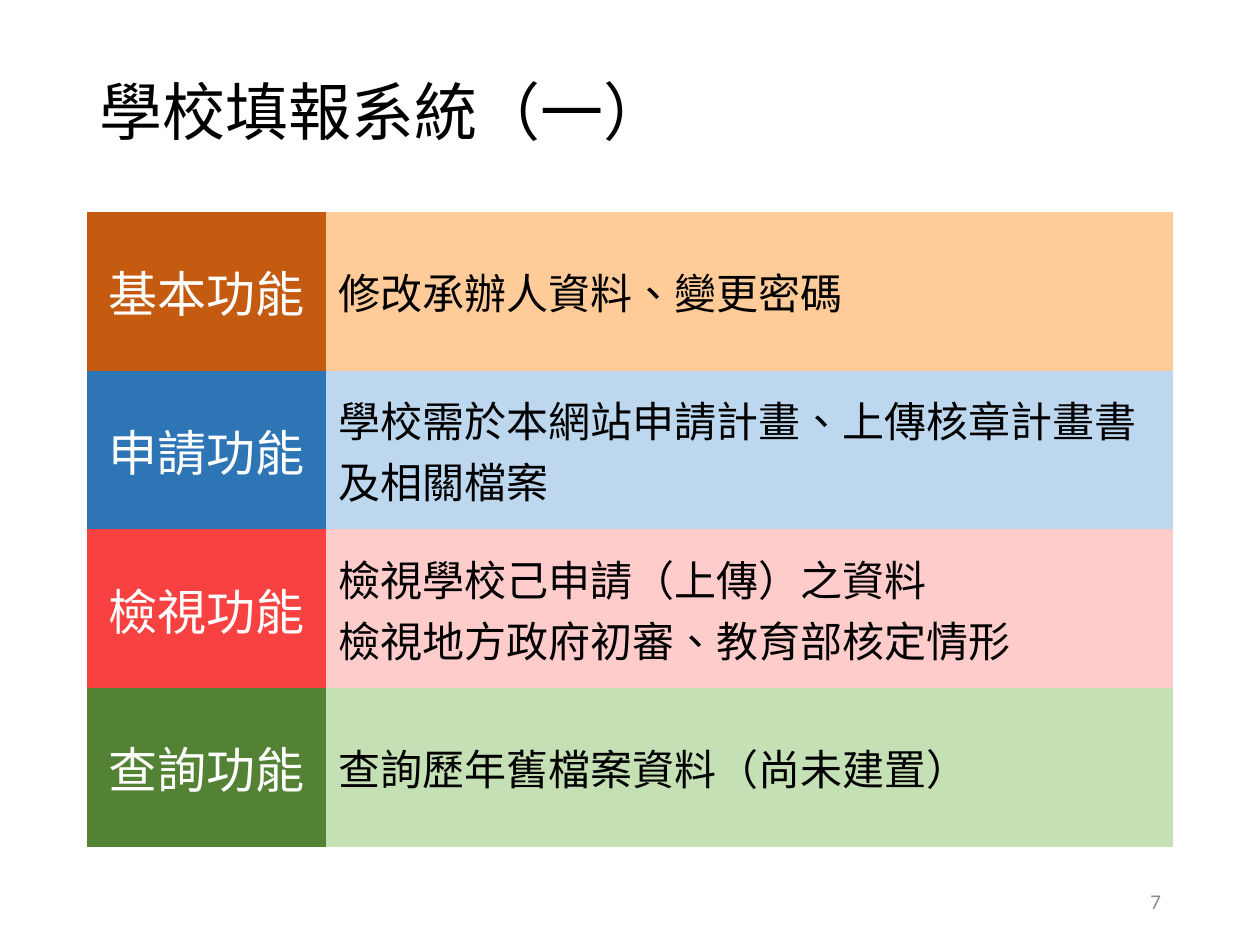
from pptx import Presentation
from pptx.dml.color import RGBColor
from pptx.enum.lang import MSO_LANGUAGE_ID
from pptx.enum.text import MSO_ANCHOR, PP_ALIGN
from pptx.oxml.ns import qn
from pptx.util import Pt
from lxml import etree

MID = MSO_ANCHOR.MIDDLE
LEFT, CENTER, RIGHT = PP_ALIGN.LEFT, PP_ALIGN.CENTER, PP_ALIGN.RIGHT
TAIWAN = MSO_LANGUAGE_ID.TRADITIONAL_CHINESE
HAN, LATIN = "Noto Sans CJK SC", "Calibri"

COLORS = {
    "black": "000000", "white": "FFFFFF", "gray": "8C8C8C",
    "rust": "C55A11", "peach": "FFCC99",
    "blue": "2E75B6", "sky": "BDD7EE",
    "red": "F84242", "pink": "FFCCCC",
    "green": "548235", "mint": "C5E0B4",
}
TITLE = "學校填報系統（一）"
NUMBER = "7"
ROWS = [
    ("基本功能", "修改承辦人資料、變更密碼", "rust", "peach"),
    ("申請功能", "學校需於本網站申請計畫、上傳核章計畫書及相關檔案", "blue", "sky"),
    ("檢視功能", "檢視學校己申請（上傳）之資料\n檢視地方政府初審、教育部核定情形", "red", "pink"),
    ("查詢功能", "查詢歷年舊檔案資料（尚未建置）", "green", "mint"),
]
EDGE, WIDTH = 49.5, 621
TOP, HEIGHT = 121, 90.75
LABEL = 136.7


def color(name):
    return RGBColor.from_string(COLORS[name])


def write(frame, text, size, ink, align, face=HAN):
    """Fill a text frame with evenly styled paragraphs."""
    frame.text = text
    frame.word_wrap = True
    for para in frame.paragraphs:
        para.alignment = align
        font = para.font
        font.size, font.name = Pt(size), face
        font.color.rgb = color(ink)
        if face == HAN:
            for run in para.runs:
                run.font.language_id = TAIWAN
            east = etree.SubElement(font._element, qn("a:ea"))
            east.set("typeface", face)


def main():
    """Build the slide on the school reporting system."""
    deck = Presentation()
    deck.slide_width, deck.slide_height = Pt(720), Pt(540)
    slide = deck.slides.add_slide(deck.slide_layouts[5])

    title = slide.shapes.title
    title.left, title.top, title.width, title.height = map(Pt, (EDGE, 36.7, WIDTH, 58.3))
    write(title.text_frame, TITLE, 36, "black", LEFT)
    title.text_frame.vertical_anchor = MID
    title.text_frame.paragraphs[0].line_spacing = 0.9

    box = map(Pt, (EDGE, TOP, WIDTH, HEIGHT * len(ROWS)))
    table = slide.shapes.add_table(len(ROWS), 2, *box).table
    table.first_row = table.horz_banding = False
    table.columns[0].width = Pt(LABEL)
    table.columns[1].width = Pt(WIDTH - LABEL)
    for i, (label, text, dark, light) in enumerate(ROWS):
        table.rows[i].height = Pt(HEIGHT)
        parts = (
            (label, 28, "white", CENTER, dark),
            (text, 24, "black", LEFT, light),
        )
        for j, (words, size, ink, align, back) in enumerate(parts):
            cell = table.cell(i, j)
            write(cell.text_frame, words, size, ink, align)
            cell.vertical_anchor = MID
            cell.fill.solid()
            cell.fill.fore_color.rgb = color(back)
    borders(table)

    page = slide.shapes.add_textbox(*map(Pt, (508.5, 500.5, 162, 28.75))).text_frame
    write(page, NUMBER, 12, "gray", RIGHT, LATIN)
    page.vertical_anchor = MID
    deck.save("out.pptx")


def borders(table):
    """Clear the borders of every cell."""
    for cell in table.iter_cells():
        props = cell._tc.get_or_add_tcPr()
        for i, side in enumerate(("lnL", "lnR", "lnT", "lnB")):
            line = etree.Element(qn("a:" + side), w="0")
            etree.SubElement(line, qn("a:noFill"))
            props.insert(i, line)


if __name__ == "__main__":
    main()
